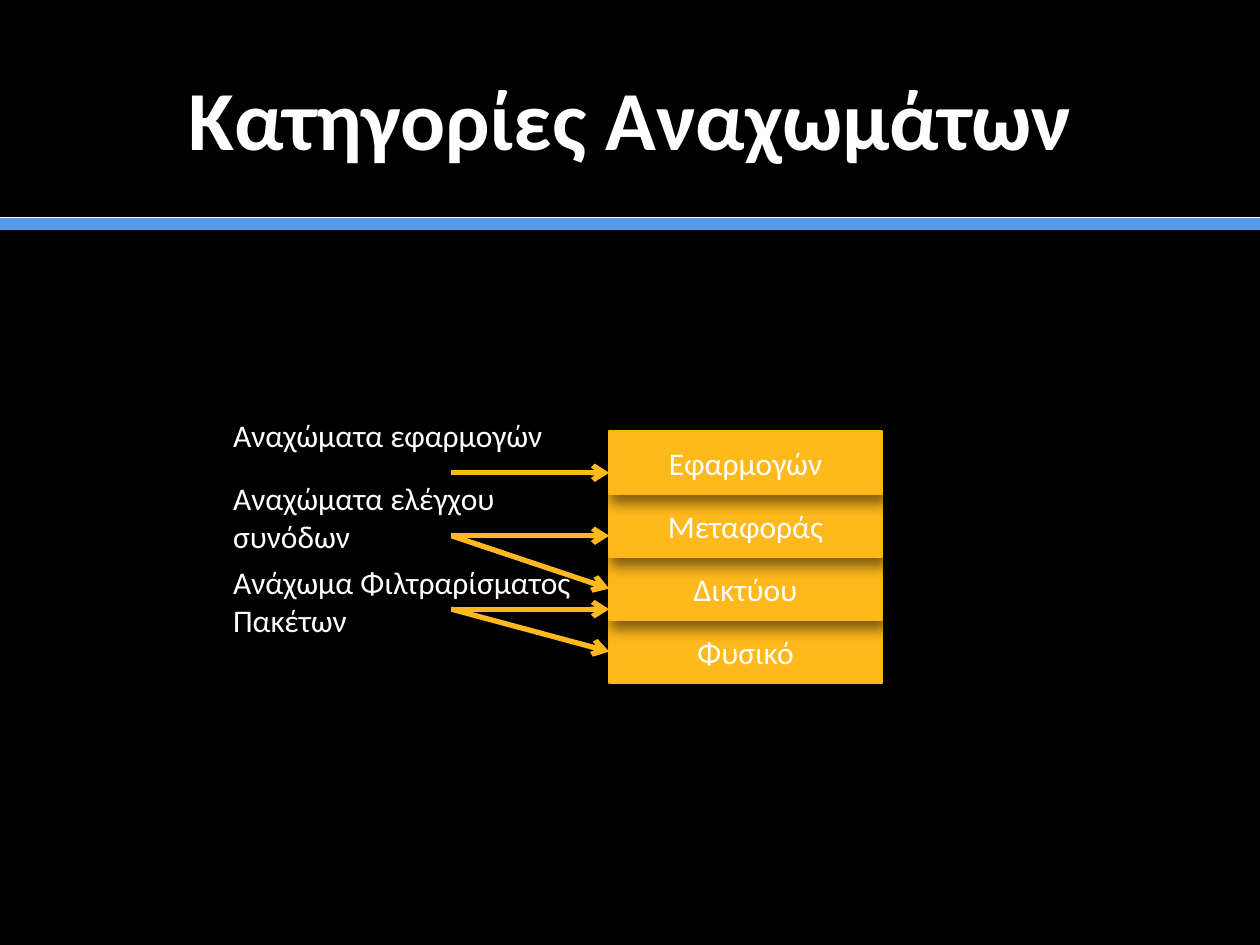
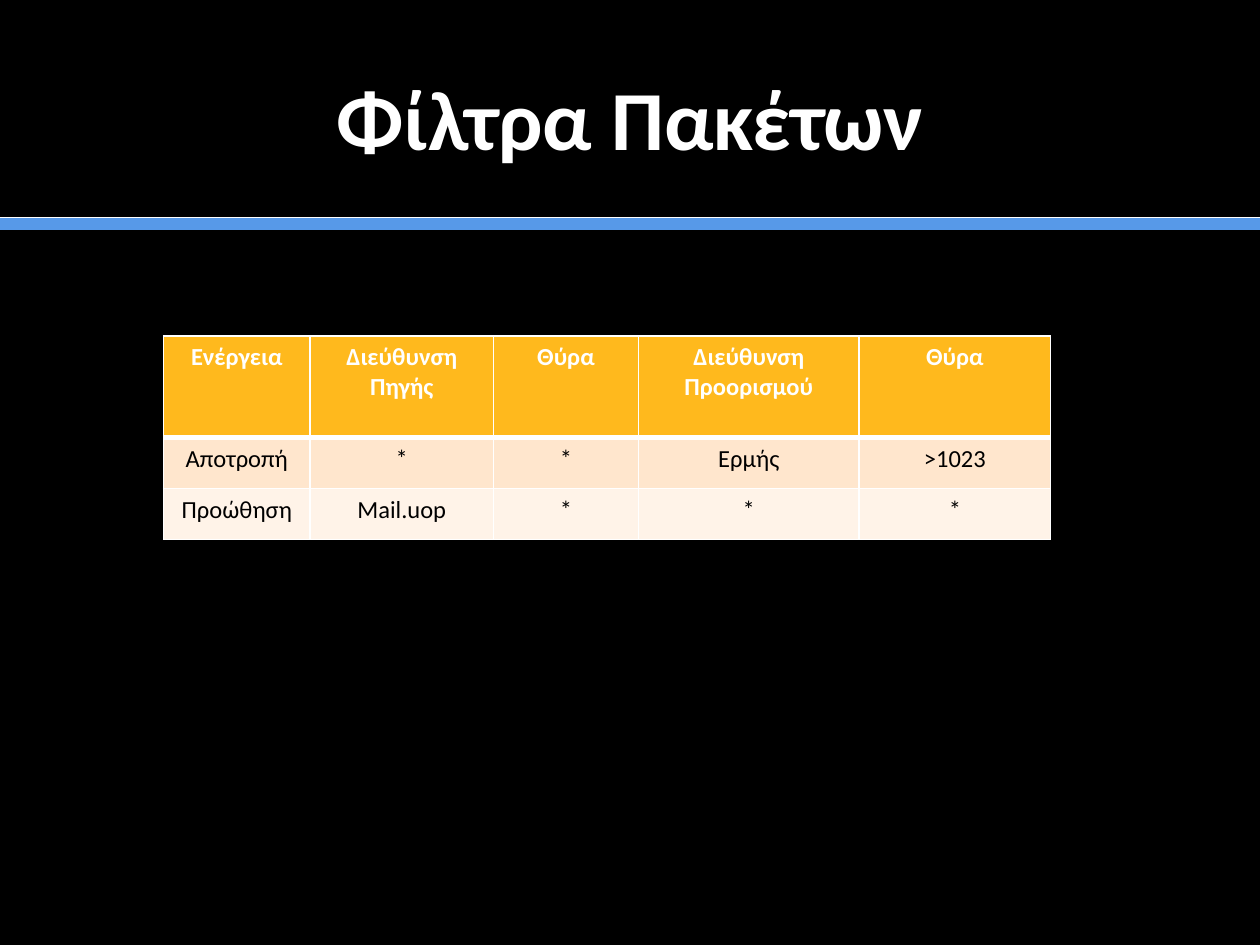
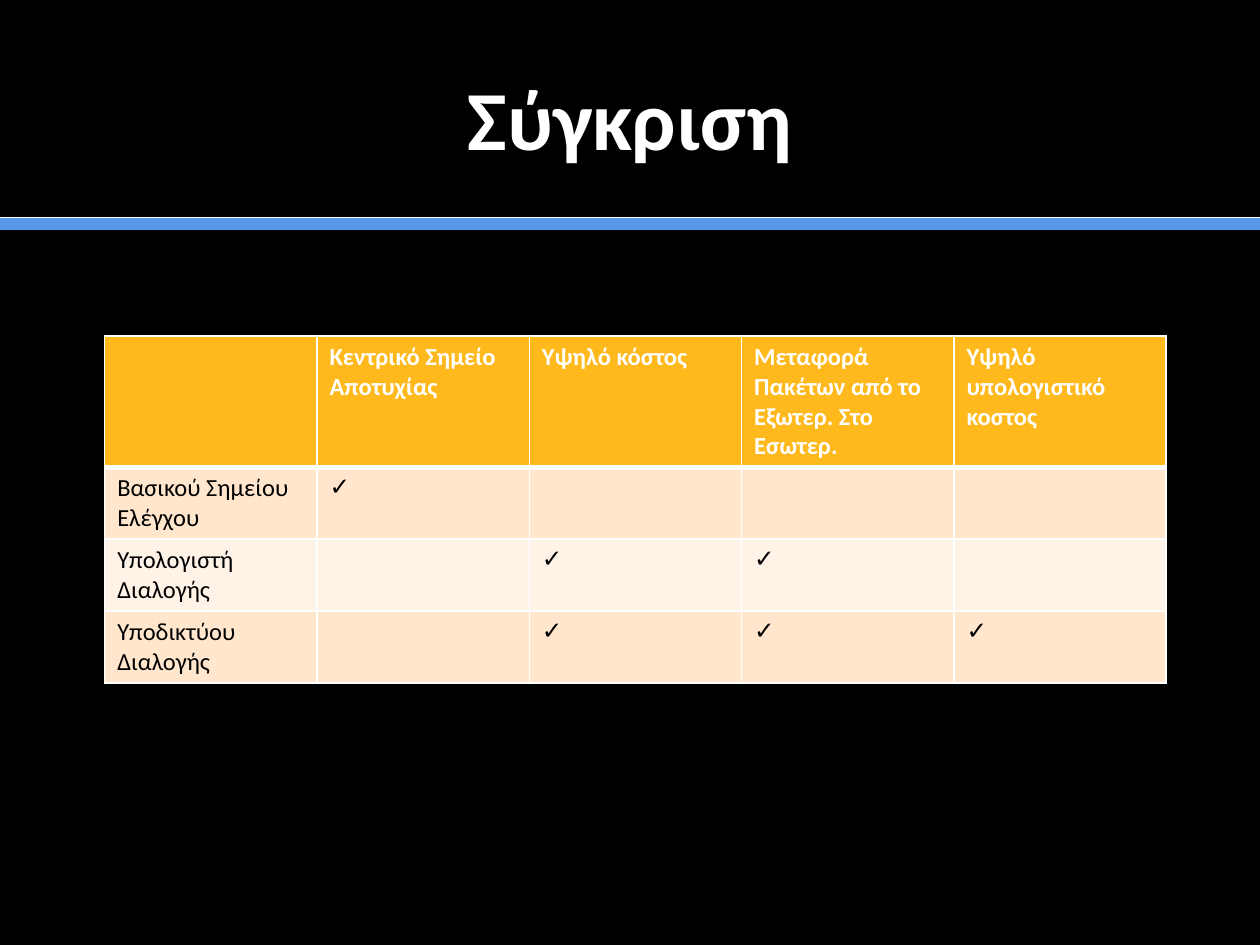
from dataclasses import dataclass

from lxml.etree import SubElement
from pptx import Presentation
from pptx.dml.color import RGBColor
from pptx.enum.shapes import MSO_CONNECTOR, MSO_SHAPE
from pptx.enum.text import MSO_ANCHOR, PP_ALIGN
from pptx.oxml.ns import qn
from pptx.util import Cm, Pt

LEFT_SIDE = 1
CHECK = "✓"


@dataclass(frozen=True)
class Theme:
    background: str = "000000"
    light: str = "FFFFFF"
    dark: str = "000000"
    band: str = "5799E8"
    accent: str = "FFB91D"
    accent_edge: str = "FFB717"
    row_fills: tuple = ("FFE6CD", "FFF3E8")
    font: str = "Calibri"
    symbol_font: str = "Arial"
    title_size: int = 48
    body_size: int = 18
    table_size: int = 14


def rgb(color):
    return RGBColor.from_string(color)


def add_color(parent, color):
    return SubElement(parent, qn("a:srgbClr"), val=color)


class Deck:
    def __init__(self, theme):
        self.theme = theme
        self.presentation = Presentation()
        self.presentation.slide_width = Cm(25.4)
        self.presentation.slide_height = Cm(19.05)
        self.slide = None

    def new_slide(self, title):
        theme = self.theme
        self.slide = self.presentation.slides.add_slide(self.presentation.slide_layouts[6])
        fill = self.slide.background.fill
        fill.solid()
        fill.fore_color.rgb = rgb(theme.background)
        self.line((0, 4.52), (25.4, 4.52), theme.band, 7)
        self.line((0, 4.39), (25.4, 4.39), theme.light, 0.5)
        heading = self.text(title, 1.27, 0.76, 22.86, 3.18, theme.title_size,
                            bold=True, align=PP_ALIGN.CENTER)
        heading.text_frame.vertical_anchor = MSO_ANCHOR.MIDDLE

    def set_text(self, frame, text, size, color, bold=False, align=PP_ALIGN.LEFT):
        frame.text = text
        paragraph = frame.paragraphs[0]
        paragraph.alignment = align
        for run in paragraph.runs:
            run.font.name = self.theme.symbol_font if text == CHECK else self.theme.font
            run.font.size = Pt(size)
            run.font.bold = bold
            run.font.color.rgb = rgb(color)

    def text(self, text, left, top, width, height, size, **style):
        box = self.slide.shapes.add_textbox(Cm(left), Cm(top), Cm(width), Cm(height))
        box.text_frame.word_wrap = True
        self.set_text(box.text_frame, text, size, self.theme.light, **style)
        return box

    def line(self, start, end, color, width):
        connector = self.slide.shapes.add_connector(
            MSO_CONNECTOR.STRAIGHT, *(Cm(value) for value in (*start, *end)))
        connector.line.color.rgb = rgb(color)
        connector.line.width = Pt(width)
        SubElement(connector._element.spPr, qn("a:effectLst"))
        return connector

    def arrow(self, start, end, target=None):
        """Draw an arrow, joined to the left side of target if one is given."""
        connector = self.line(start, end, self.theme.accent, 3)
        SubElement(connector.line._get_or_add_ln(), qn("a:tailEnd"), type="arrow")
        if target is not None:
            connector.end_connect(target, LEFT_SIDE)

    def block(self, text, left, top, width, height):
        theme = self.theme
        block = self.slide.shapes.add_shape(
            MSO_SHAPE.RECTANGLE, Cm(left), Cm(top), Cm(width), Cm(height))
        block.fill.solid()
        block.fill.fore_color.rgb = rgb(theme.accent)
        block.line.color.rgb = rgb(theme.accent_edge)
        block.line.width = Pt(1.5)
        self.cast_shadow(block)
        block.text_frame.vertical_anchor = MSO_ANCHOR.MIDDLE
        self.set_text(block.text_frame, text, theme.body_size, theme.light,
                      align=PP_ALIGN.CENTER)
        return block

    def cast_shadow(self, block):
        block.shadow.inherit = False
        effects = block._element.spPr.find(qn("a:effectLst"))
        shadow = SubElement(effects, qn("a:outerShdw"), blurRad=str(Pt(8)), dist=str(Pt(5)),
                            dir=str(70 * 60000), rotWithShape="0")
        SubElement(add_color(shadow, self.theme.dark), qn("a:alpha"), val="50000")

    def table(self, rows, left, top, column_widths, row_heights, align=PP_ALIGN.LEFT):
        theme = self.theme
        table = self.slide.shapes.add_table(
            len(rows), len(column_widths), Cm(left), Cm(top),
            Cm(sum(column_widths)), Cm(sum(row_heights))).table
        table.horz_banding = False
        for column, width in zip(table.columns, column_widths):
            column.width = Cm(width)
        for row, height in zip(table.rows, row_heights):
            row.height = Cm(height)
        for row_index, row in enumerate(rows):
            header = row_index == 0
            fill = theme.accent if header else theme.row_fills[(row_index - 1) % 2]
            for column_index, text in enumerate(row):
                cell = table.cell(row_index, column_index)
                self.border(cell, top=3 if row_index == 1 else 1, bottom=3 if header else 1)
                cell.fill.solid()
                cell.fill.fore_color.rgb = rgb(fill)
                self.set_text(cell.text_frame, text, theme.table_size,
                              theme.light if header else theme.dark, header, align)

    def border(self, cell, top, bottom):
        properties = cell._tc.get_or_add_tcPr()
        for side, width in (("L", 1), ("R", 1), ("T", top), ("B", bottom)):
            edge = SubElement(properties, qn(f"a:ln{side}"), w=str(Pt(width)))
            add_color(SubElement(edge, qn("a:solidFill")), self.theme.light)


def firewall_categories(deck):
    deck.new_slide("Κατηγορίες Αναχωμάτων")
    layer_left, layer_top, layer_height = 12.28, 8.69, 1.27
    layers = ["Εφαρμογών", "Μεταφοράς", "Δικτύου", "Φυσικό"]
    blocks = {}
    # Bottom layer first, so that each shadow falls on the layer below
    for index, layer in reversed(list(enumerate(layers))):
        blocks[layer] = deck.block(layer, layer_left, layer_top + index * layer_height,
                                   5.5, layer_height)

    for label, top, width, height in (
        ("Αναχώματα εφαρμογών", 8.26, 7.34, 1.03),
        ("Αναχώματα ελέγχου συνόδων", 9.53, 7.62, 1.8),
        ("Ανάχωμα Φιλτραρίσματος Πακέτων", 11.23, 8.89, 1.8),
    ):
        deck.text(label, 4.45, top, width, height, deck.theme.body_size)

    for level, second_layer in ((9.53, None), (10.8, "Δικτύου"), (12.28, "Φυσικό")):
        start, end = (9.1, level), (layer_left, level)
        deck.arrow(start, end)
        if second_layer:
            deck.arrow(start, end, blocks[second_layer])


def packet_filters(deck):
    deck.new_slide("Φίλτρα Πακέτων")
    rules = [
        ["Ενέργεια", "Διεύθυνση Πηγής", "Θύρα", "Διεύθυνση Προορισμού", "Θύρα"],
        ["Αποτροπή", "*", "*", "Ερμής", ">1023"],
        ["Προώθηση", "Mail.uop", "*", "*", "*"],
    ]
    deck.table(rules, 3.3, 6.77, [2.95, 3.7, 2.92, 4.45, 3.86], [2.05, 1.03, 1.03],
               PP_ALIGN.CENTER)


def comparison(deck):
    deck.new_slide("Σύγκριση")
    architectures = [
        ["", "Κεντρικό Σημείο Αποτυχίας", "Υψηλό κόστος",
         "Μεταφορά Πακέτων από το Εξωτερ. Στο Εσωτερ.", "Υψηλό υπολογιστικό κοστος"],
        ["Βασικού Σημείου Ελέγχου", CHECK, "", "", ""],
        ["Υπολογιστή Διαλογής", "", CHECK, CHECK, ""],
        ["Υποδικτύου Διαλογής", "", CHECK, CHECK, CHECK],
    ]
    deck.table(architectures, 2.11, 6.77, [4.28] * 5, [2.65] + [1.45] * 3)


def main():
    deck = Deck(Theme())
    firewall_categories(deck)
    packet_filters(deck)
    comparison(deck)
    deck.presentation.save("out.pptx")


if __name__ == "__main__":
    main()
